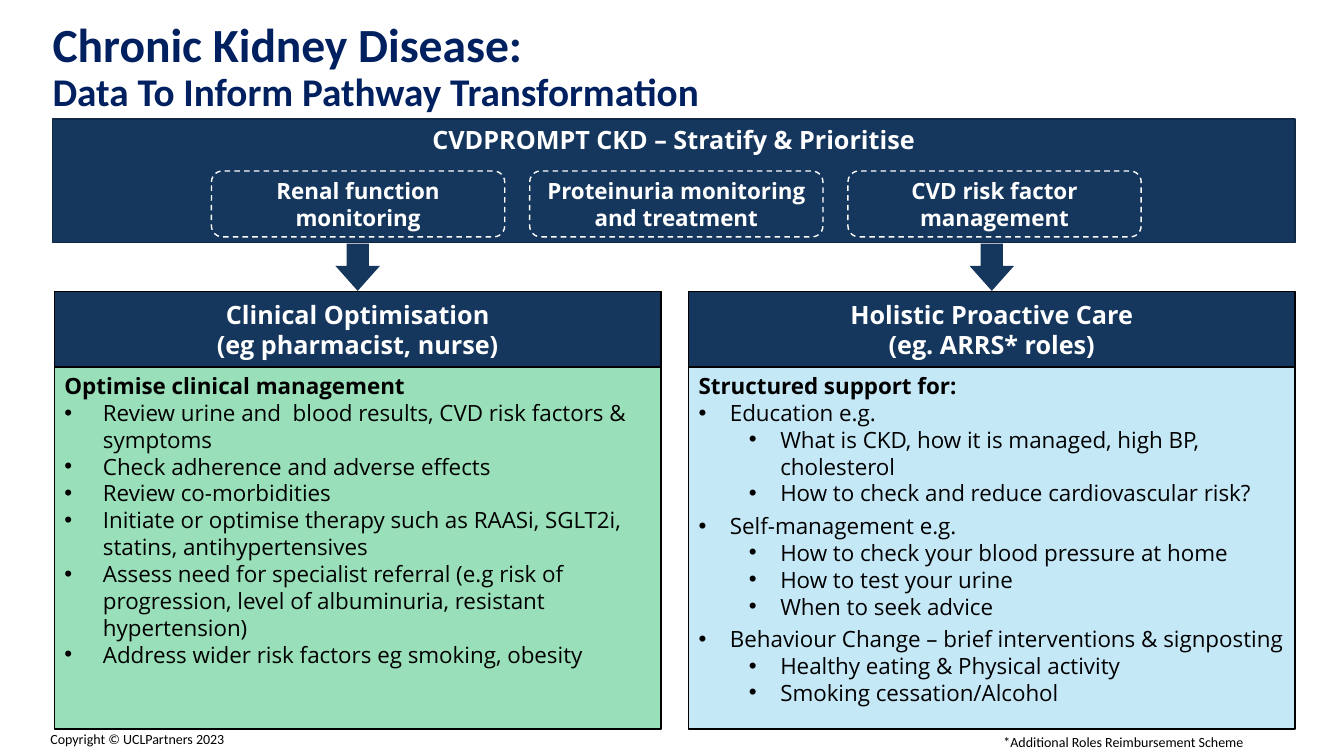
import lxml.etree
import pptx
import pptx.dml.color
import pptx.enum.dml
import pptx.enum.shapes
import pptx.enum.text
import pptx.oxml.ns
import pptx.util

Cm = pptx.util.Cm
Pt = pptx.util.Pt
RGBColor = pptx.dml.color.RGBColor
Shape = pptx.enum.shapes.MSO_SHAPE
Align = pptx.enum.text.PP_ALIGN
Anchor = pptx.enum.text.MSO_ANCHOR
qn = pptx.oxml.ns.qn

TITLE_BLUE = RGBColor(0x00, 0x20, 0x60)
NAVY = RGBColor(0x15, 0x37, 0x5E)
NAVY_EDGE = RGBColor(0x10, 0x29, 0x46)
GREEN = RGBColor(0x00, 0xB0, 0x50)
SKY = RGBColor(0x42, 0xB6, 0xE6)
BLACK = RGBColor(0x00, 0x00, 0x00)
WHITE = RGBColor(0xFF, 0xFF, 0xFF)

PANEL_WIDTH = 15.29
HEADER_TOP, HEADER_HEIGHT = 7.35, 1.9
PANEL_TOP, PANEL_HEIGHT = 9.25, 9.12
ARROW_WIDTH, ARROW_HEIGHT = 1.12, 1.19

TAGS = ["Renal function monitoring", "Proteinuria monitoring\nand treatment", "CVD risk factor\nmanagement"]

CLINICAL = [
    (0, "Review urine and  blood results, CVD risk factors & symptoms"),
    (0, "Check adherence and adverse effects"),
    (0, "Review co-morbidities"),
    (0, "Initiate or optimise therapy such as RAASi, SGLT2i, statins, antihypertensives"),
    (0, "Assess need for specialist referral (e.g risk of progression, "
        "level of albuminuria, resistant hypertension)"),
    (0, "Address wider risk factors eg smoking, obesity"),
]
HOLISTIC = [
    (0, "Education e.g."),
    (1, "What is CKD, how it is managed, high BP, cholesterol"),
    (1, "How to check and reduce cardiovascular risk?"),
    (0, "Self-management e.g."),
    (1, "How to check your blood pressure at home"),
    (1, "How to test your urine"),
    (1, "When to seek advice"),
    (0, "Behaviour Change – brief interventions & signposting"),
    (1, "Healthy eating & Physical activity"),
    (1, "Smoking cessation/Alcohol"),
]


class PathwayPage:
    heading_font = "Calibri"
    text_font = "Open Sans"

    def __init__(self, deck):
        self.page = deck.slides.add_slide(deck.slide_layouts[3])
        self.title_box, self.left_list, self.right_list = self.page.placeholders

    def place(self, shape, left, top, width, height):
        shape.left, shape.top = Cm(left), Cm(top)
        shape.width, shape.height = Cm(width), Cm(height)

    def style(self, para, name, size, color, bold):
        para.font.name, para.font.size = name, Pt(size)
        para.font.bold = bold
        para.font.color.rgb = color

    def outline(self, shape, color):
        shape.line.color.rgb = color
        shape.line.width = Pt(1)

    def fill_text(self, frame, text, name, size, color, bold, align):
        frame.text = text
        for para in frame.paragraphs:
            para.alignment = align
            self.style(para, name, size, color, bold)

    def title(self, lines, area):
        self.place(self.title_box, *area)
        frame = self.title_box.text_frame
        frame.auto_size = pptx.enum.text.MSO_AUTO_SIZE.NONE
        frame.vertical_anchor = Anchor.TOP
        frame.text = "\n".join(text for text, size in lines)
        for para, (text, size) in zip(frame.paragraphs, lines):
            para.alignment = Align.LEFT
            para.line_spacing = 0.9
            self.style(para, self.heading_font, size, TITLE_BLUE, True)

    def box(self, kind, area, text="", size=18, fill=None, edge=None, anchor=Anchor.MIDDLE):
        shape = self.page.shapes.add_shape(kind, *(Cm(length) for length in area))
        shape.shadow.inherit = False
        if fill is None:
            shape.fill.background()
        else:
            shape.fill.solid()
            shape.fill.fore_color.rgb = fill
        if edge is None:
            shape.line.fill.background()
        else:
            self.outline(shape, edge)
        if text:
            shape.text_frame.vertical_anchor = anchor
            shape.text_frame.word_wrap = True
            self.fill_text(shape.text_frame, text, self.text_font, size, WHITE, True, Align.CENTER)
        return shape

    def tag(self, text, area):
        shape = self.box(Shape.ROUNDED_RECTANGLE, area, text, 16, edge=WHITE)
        shape.line.dash_style = pptx.enum.dml.MSO_LINE.DASH

    def arrow(self, centre, top):
        area = (centre - ARROW_WIDTH / 2, top, ARROW_WIDTH, ARROW_HEIGHT)
        shape = self.box(Shape.DOWN_ARROW, area, fill=NAVY)
        shape.adjustments[1] = 0.56

    def note(self, text, area):
        box = self.page.shapes.add_textbox(*(Cm(length) for length in area))
        box.text_frame.word_wrap = True
        self.fill_text(box.text_frame, text, self.heading_font, 10, BLACK, False, Align.LEFT)

    def bullet(self, para, margin, hanging, mark):
        properties = para._p.get_or_add_pPr()
        properties.set("marL", str(Cm(margin)))
        properties.set("indent", str(-Cm(hanging)))
        if mark:
            lxml.etree.SubElement(properties, qn("a:buFont")).set("typeface", "Arial")
            lxml.etree.SubElement(properties, qn("a:buChar")).set("char", mark)
        else:
            lxml.etree.SubElement(properties, qn("a:buNone"))

    def panel(self, holder, left, fill, opacity, lead, items, hanging):
        self.place(holder, left, PANEL_TOP, PANEL_WIDTH, PANEL_HEIGHT)
        holder.fill.solid()
        holder.fill.fore_color.rgb = fill
        color = holder._element.spPr.find(qn("a:solidFill"))[0]
        lxml.etree.SubElement(color, qn("a:alpha")).set("val", str(opacity * 1000))
        self.outline(holder, BLACK)
        frame = holder.text_frame
        frame.auto_size = pptx.enum.text.MSO_AUTO_SIZE.NONE
        frame.vertical_anchor = Anchor.TOP
        frame.text = "\n".join([lead] + [text for level, text in items])
        lead_para, *list_paras = frame.paragraphs
        lead_para.space_before = Pt(0)
        self.bullet(lead_para, 0, 0, None)
        self.style(lead_para, self.text_font, 16, BLACK, True)
        previous = 0
        for para, (level, text) in zip(list_paras, items):
            para.level = level
            para.space_before = Pt(4 if level < previous else 0)
            self.bullet(para, hanging + 1.27 * level, hanging, "•")
            self.style(para, self.text_font, 16, BLACK, False)
            previous = level


def main():
    deck = pptx.Presentation()
    deck.slide_width, deck.slide_height = Cm(33.87), Cm(19.05)
    page = PathwayPage(deck)
    page.title([("Chronic Kidney Disease:", 34), ("Data To Inform Pathway Transformation", 28)],
               (1.07, 0.41, 28.32, 2.41))
    page.box(Shape.RECTANGLE, (1.32, 3, 31.32, 3.12), "CVDPROMPT CKD – Stratify & Prioritise",
             fill=NAVY, edge=NAVY_EDGE, anchor=Anchor.TOP)
    for index, text in enumerate(TAGS):
        page.tag(text, (5.33 + 8.02 * index, 4.31, 7.39, 1.66))
    columns = [
        (page.left_list, 1.37, "Clinical Optimisation\n(eg pharmacist, nurse)",
         GREEN, 40, "Optimise clinical management", CLINICAL, 0.97),
        (page.right_list, 17.35, "Holistic Proactive Care\n(eg. ARRS* roles)",
         SKY, 30, "Structured support for:", HOLISTIC, 0.79),
    ]
    for holder, left, heading, fill, opacity, lead, items, hanging in columns:
        page.box(Shape.RECTANGLE, (left, HEADER_TOP, PANEL_WIDTH, HEADER_HEIGHT), heading,
                 fill=NAVY, edge=BLACK)
        page.panel(holder, left, fill, opacity, lead, items, hanging)
        page.arrow(left + PANEL_WIDTH / 2, 6.14)
    page.note("Copyright © UCLPartners 2023", (1.02, 18.29, 4.98, 0.69))
    page.note("*Additional Roles Reimbursement Scheme", (25.04, 18.36, 7.62, 0.69))
    deck.save("out.pptx")


if __name__ == "__main__":
    main()
